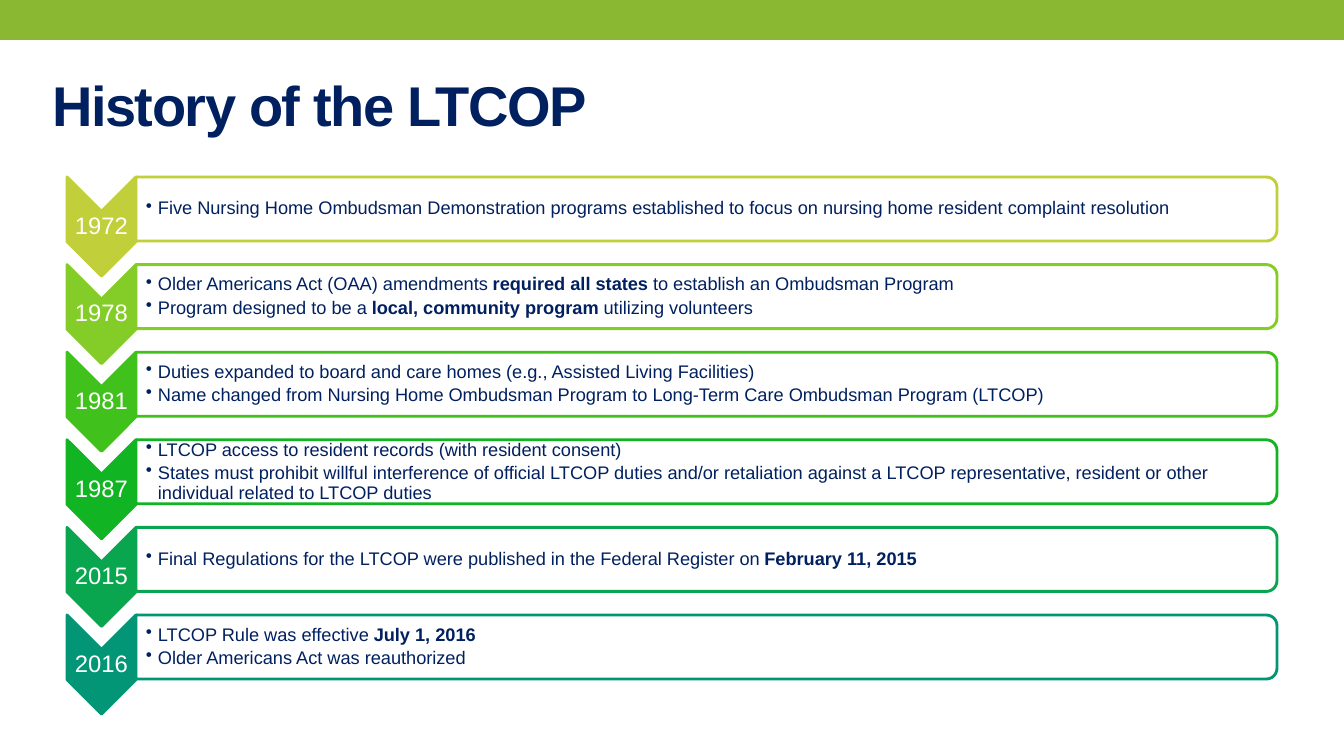
from lxml.etree import SubElement
from pptx import Presentation
from pptx.dml.color import RGBColor
from pptx.enum.shapes import MSO_SHAPE as Shape
from pptx.enum.text import MSO_ANCHOR as Anchor, PP_ALIGN as Align
from pptx.oxml.ns import qn
from pptx.util import Emu, Pt

SLIDE_W, SLIDE_H = 1344, 756
EMU_PER_PX = 12192000 / SLIDE_W

WHITE = RGBColor(0xFF, 0xFF, 0xFF)
NAVY = RGBColor(0x00, 0x20, 0x60)
BAND_GREEN = RGBColor(0x8A, 0xB8, 0x33)

# Timeline geometry
FIRST_TOP, LAST_TOP = 177, 615
CHEVRON_X, CHEVRON_W, CHEVRON_H = 67, 69, 99
BAR_X, BAR_W, BAR_H = 136, 1141, 64

# Year, colour, bullets; within a bullet every second run is bold
MILESTONES = [
    ("1972", RGBColor(0xC0, 0xCF, 0x3A), [
        ["Five Nursing Home Ombudsman Demonstration programs established to "
         "focus on nursing home resident complaint resolution"]]),
    ("1978", RGBColor(0x84, 0xCC, 0x27), [
        ["Older Americans Act (OAA) amendments ", "required all states ",
         "to establish an Ombudsman Program"],
        ["Program designed to be a ", "local, community program ",
         "utilizing volunteers"]]),
    ("1981", RGBColor(0x40, 0xC1, 0x1B), [
        ["Duties expanded to board and care homes (e.g., Assisted Living Facilities)"],
        ["Name changed from Nursing Home Ombudsman Program to Long-Term Care "
         "Ombudsman Program (LTCOP)"]]),
    ("1987", RGBColor(0x11, 0xB4, 0x23), [
        ["LTCOP access to resident records (with resident consent)"],
        ["States must prohibit willful interference of official LTCOP duties "
         "and/or retaliation against a LTCOP representative, resident or other "
         "individual related to LTCOP duties"]]),
    ("2015", RGBColor(0x09, 0xA6, 0x4F), [
        ["Final Regulations for the LTCOP were published in the Federal Register on ",
         "February 11, 2015"]]),
    ("2016", RGBColor(0x02, 0x96, 0x76), [
        ["LTCOP Rule was effective ", "July 1, 2016"],
        ["Older Americans Act was reauthorized"]]),
]


def px(length):
    return Emu(round(length * EMU_PER_PX))


def add_run(para, text, size, color, bold=False):
    run = para.add_run()
    run.text = text
    run.font.name = "Arial"
    run.font.size = Pt(size)
    run.font.bold = bold
    run.font.color.rgb = color
    return run


def add_plain_shape(page, kind, left, top, width, height, fill, line=None):
    shape = page.shapes.add_shape(kind, px(left), px(top), px(width), px(height))
    shape.shadow.inherit = False
    shape.fill.solid()
    shape.fill.fore_color.rgb = fill
    if line is None:
        shape.line.fill.background()
    else:
        shape.line.color.rgb = line
        shape.line.width = Pt(2.08)
    return shape


def add_turned_shape(page, kind, left, top, width, height, fill, line):
    """Place a shape turned by 90 degrees so that it covers the given area."""
    shift = (width - height) / 2
    shape = add_plain_shape(page, kind, left + shift, top - shift,
                            height, width, fill, line)
    shape.rotation = 90
    return shape


def add_text_frame(page, left, top, width, height, left_inset):
    box = page.shapes.add_textbox(px(left), px(top), px(width), px(height))
    frame = box.text_frame
    frame.word_wrap = True
    frame.vertical_anchor = Anchor.MIDDLE
    frame.margin_left = px(left_inset)
    frame.margin_top = frame.margin_right = frame.margin_bottom = px(1)
    return frame


def set_bullet(para):
    props = para._p.get_or_add_pPr()
    props.set("marL", str(px(12)))
    props.set("indent", str(-px(12)))
    SubElement(props, qn("a:buChar")).set("char", "•")


def add_title(page, text):
    title = page.shapes.title
    title.left, title.top, title.width, title.height = map(px, (42, 50, 1210, 109))
    title.text_frame.vertical_anchor = Anchor.MIDDLE
    para = title.text_frame.paragraphs[0]
    para.alignment = Align.LEFT
    run = add_run(para, text, 40, NAVY, bold=True)
    run.font._element.set("spc", "-100")


def add_year(page, top, year, color):
    add_turned_shape(page, Shape.CHEVRON, CHEVRON_X, top,
                     CHEVRON_W, CHEVRON_H, color, color)
    frame = add_text_frame(page, CHEVRON_X, top + 35, CHEVRON_W, 29, 1)
    para = frame.paragraphs[0]
    para.alignment = Align.CENTER
    para.line_spacing = 0.9
    add_run(para, year, 17, WHITE)


def add_events(page, top, bullets, color):
    bar = add_turned_shape(page, Shape.ROUND_2_SAME_RECTANGLE, BAR_X, top,
                           BAR_W, BAR_H, WHITE, color)
    white = bar.fill._xPr.find(qn("a:solidFill"))[0]
    SubElement(white, qn("a:alpha")).set("val", "90000")

    frame = add_text_frame(page, BAR_X, top + 3, BAR_W - 3, BAR_H - 6, 10)
    for index, runs in enumerate(bullets):
        para = frame.add_paragraph() if index else frame.paragraphs[0]
        para.level = 1
        para.line_spacing = 0.9
        para.space_after = Pt(2.5)
        set_bullet(para)
        for position, text in enumerate(runs):
            add_run(para, text, 13, NAVY, bold=position % 2 == 1)


def main():
    deck = Presentation()
    deck.slide_width, deck.slide_height = px(SLIDE_W), px(SLIDE_H)
    page = deck.slides.add_slide(deck.slide_layouts[5])

    # Heading
    add_plain_shape(page, Shape.RECTANGLE, 0, 0, SLIDE_W, 40, BAND_GREEN)
    add_title(page, "History of the LTCOP")

    # Timeline rows at an equal pitch
    pitch = (LAST_TOP - FIRST_TOP) / (len(MILESTONES) - 1)
    for row, (year, color, bullets) in enumerate(MILESTONES):
        top = FIRST_TOP + row * pitch
        add_year(page, top, year, color)
        add_events(page, top, bullets, color)

    deck.save("out.pptx")


if __name__ == "__main__":
    main()
